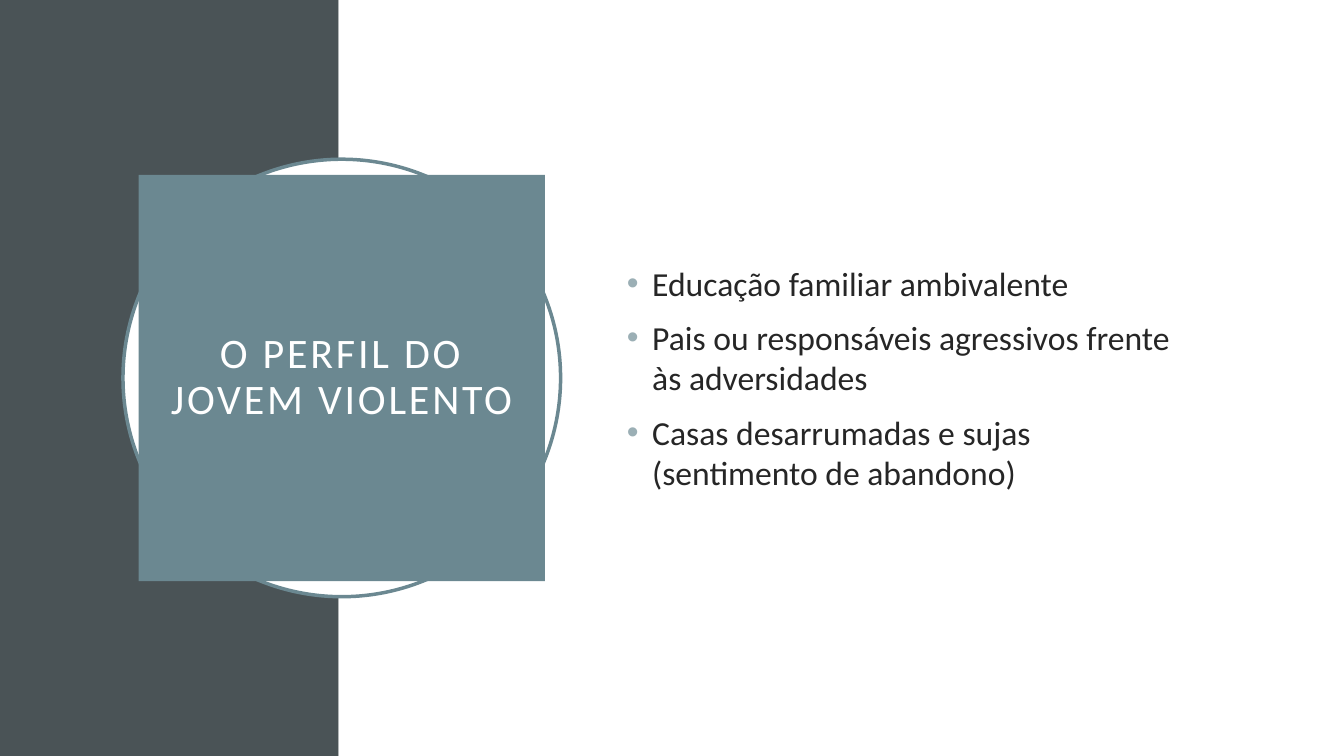
import pptx
import pptx.util
import pptx.dml.color
import pptx.enum.shapes
import pptx.enum.text
import pptx.oxml.ns
from lxml import etree

TITLE = "O PERFIL DO JOVEM VIOLENTO"
POINTS = [
    "Educação familiar ambivalente",
    "Pais ou responsáveis agressivos frente às adversidades",
    "Casas desarrumadas e sujas (sentimento de abandono)",
]
COLORS = {
    "band": "4A5356",
    "white": "FFFFFF",
    "accent": "6B8891",
    "bullet": "9BAFB5",
    "text": "262626",
}
FONT = "Calibri"
SLIDE_W, SLIDE_H = 13.33, 7.5
BAND_W = 3.36
CENTER_X, CENTER_Y = 3.39, 3.75
RING_SIZE, TITLE_SIZE = 4.34, 4.03

Inches = pptx.util.Inches
Pt = pptx.util.Pt
SHAPES = pptx.enum.shapes.MSO_SHAPE
ALIGN = pptx.enum.text.PP_ALIGN
MIDDLE = pptx.enum.text.MSO_ANCHOR.MIDDLE
qn = pptx.oxml.ns.qn


def rgb(name):
    return pptx.dml.color.RGBColor.from_string(COLORS[name])


def add_block(slide, kind, left, top, width, height, fill, line=None):
    block = slide.shapes.add_shape(
        kind, Inches(left), Inches(top), Inches(width), Inches(height))
    block.shadow.inherit = False
    block.fill.solid()
    block.fill.fore_color.rgb = rgb(fill)
    if line:
        block.line.color.rgb = rgb(line)
        block.line.width = Pt(2.5)
    else:
        block.line.fill.background()
    return block


def add_centered(slide, kind, size, fill, line=None):
    return add_block(slide, kind, CENTER_X - size / 2, CENTER_Y - size / 2,
                     size, size, fill, line)


def style_run(run, size, color):
    run.font.name = FONT
    run.font.size = Pt(size)
    run.font.color.rgb = rgb(color)


def add_bullet(paragraph):
    props = paragraph._p.get_or_add_pPr()
    props.set("marL", str(Inches(0.25)))
    props.set("indent", str(-Inches(0.25)))
    color = etree.SubElement(props, qn("a:buClr"))
    etree.SubElement(color, qn("a:srgbClr"), val=COLORS["bullet"])
    etree.SubElement(props, qn("a:buFont"), typeface="Arial")
    etree.SubElement(props, qn("a:buChar"), char="•")


def add_title(slide):
    title = add_centered(slide, SHAPES.RECTANGLE, TITLE_SIZE, "accent")
    frame = title.text_frame
    frame.text = TITLE
    frame.word_wrap = True
    frame.vertical_anchor = MIDDLE
    frame.margin_left = frame.margin_right = Inches(0.2)
    frame.margin_top = frame.margin_bottom = Inches(0.2)
    paragraph = frame.paragraphs[0]
    paragraph.alignment = ALIGN.CENTER
    paragraph.line_spacing = 0.9
    run = paragraph.runs[0]
    style_run(run, 30, "white")
    run._r.get_or_add_rPr().set("spc", "200")


def add_points(slide):
    body = slide.shapes.add_textbox(
        Inches(6.12), Inches(1.53), Inches(5.82), Inches(4.43))
    frame = body.text_frame
    frame.text = "\n".join(POINTS)
    frame.word_wrap = True
    frame.vertical_anchor = MIDDLE
    for paragraph in frame.paragraphs:
        paragraph.space_before = Pt(10)
        add_bullet(paragraph)
        style_run(paragraph.runs[0], 24, "text")


def main():
    deck = pptx.Presentation()
    deck.slide_width = Inches(SLIDE_W)
    deck.slide_height = Inches(SLIDE_H)
    slide = deck.slides.add_slide(deck.slide_layouts[6])
    add_block(slide, SHAPES.RECTANGLE, 0, 0, BAND_W, SLIDE_H, "band")
    add_block(slide, SHAPES.RECTANGLE, BAND_W, 0, SLIDE_W - BAND_W, SLIDE_H, "white")
    add_centered(slide, SHAPES.OVAL, RING_SIZE, "white", "accent")
    add_title(slide)
    add_points(slide)
    deck.save("out.pptx")


if __name__ == "__main__":
    main()
